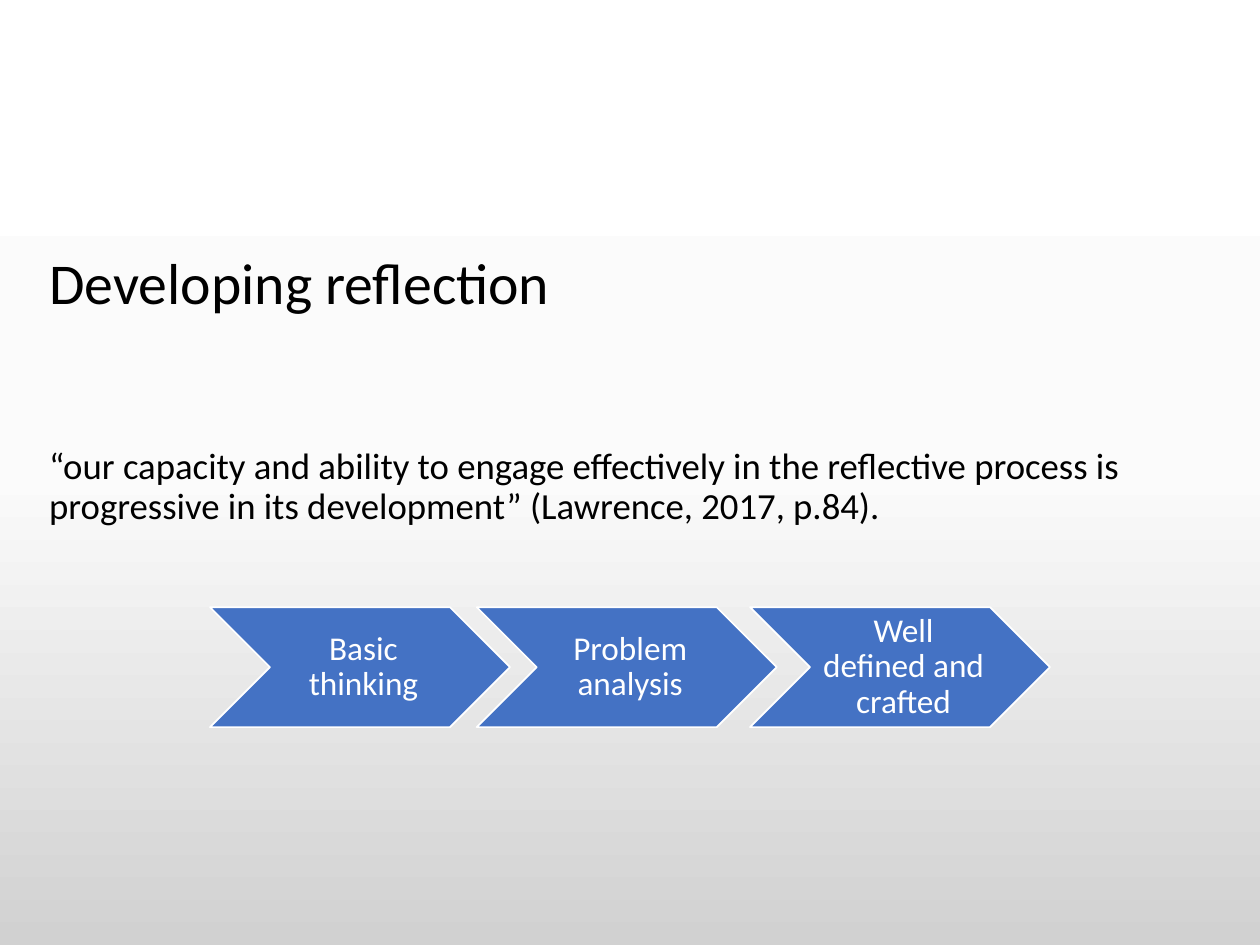
from copy import deepcopy
from dataclasses import dataclass

from pptx import Presentation
from pptx.dml.color import RGBColor as RGB
from pptx.enum.shapes import MSO_SHAPE as Shape
from pptx.enum.text import MSO_ANCHOR as Anchor, MSO_AUTO_SIZE as AutoSize, PP_ALIGN as Align
from pptx.oxml.ns import qn
from pptx.util import Pt


@dataclass(frozen=True)
class Theme:
    font: str = "Calibri"
    ink: str = "000000"
    light: str = "FFFFFF"
    accent: str = "4472C4"
    backdrop: tuple = ((0, "FFFFFF"), (0.5, "FBFBFB"), (1, "D1D1D1"))
    title_size: float = 33
    body_size: float = 21
    step_size: float = 19
    line_spacing: float = 0.9


class SlideBuilder:
    def __init__(self, slide, theme):
        self.slide = slide
        self.theme = theme

    def set_text(self, shape, text, size, color, align, anchor):
        frame = shape.text_frame
        frame.text = text
        frame.word_wrap = True
        frame.auto_size = AutoSize.NONE
        frame.vertical_anchor = anchor
        para = frame.paragraphs[0]
        para.alignment = align
        para.line_spacing = self.theme.line_spacing
        para.space_before = Pt(0)
        for span in para.runs:
            span.font.name = self.theme.font
            span.font.size = Pt(size)
            span.font.color.rgb = RGB.from_string(color)

    def background(self):
        """Fill the page with the three-stop gradient, running downwards."""
        fill = self.slide.background.fill
        fill.gradient()
        fill.gradient_angle = 270
        stop_list = self.slide.element.find(".//" + qn("a:gsLst"))
        stop_list.insert(1, deepcopy(stop_list[0]))
        for stop, (position, color) in zip(fill.gradient_stops, self.theme.backdrop):
            stop.position = position
            stop.color.rgb = RGB.from_string(color)

    def title(self, text, left, top, width, height):
        title = self.slide.shapes.title
        title.left, title.top = Pt(left), Pt(top)
        title.width, title.height = Pt(width), Pt(height)
        self.set_text(title, text, self.theme.title_size, self.theme.ink,
                      Align.LEFT, Anchor.MIDDLE)

    def body(self, text, left, top, width, height):
        box = self.slide.shapes.add_textbox(Pt(left), Pt(top), Pt(width), Pt(height))
        self.set_text(box, text, self.theme.body_size, self.theme.ink,
                      Align.LEFT, Anchor.TOP)

    def chevron(self, text, left, top, width, height):
        step = self.slide.shapes.add_shape(
            Shape.CHEVRON, Pt(left), Pt(top), Pt(width), Pt(height))
        step.shadow.inherit = False
        step.fill.solid()
        step.fill.fore_color.rgb = RGB.from_string(self.theme.accent)
        step.line.color.rgb = RGB.from_string(self.theme.light)
        step.line.width = Pt(1)
        frame = step.text_frame
        frame.margin_left = Pt(6)
        frame.margin_top = frame.margin_right = frame.margin_bottom = Pt(2)
        self.set_text(step, text, self.theme.step_size, self.theme.light,
                      Align.CENTER, Anchor.MIDDLE)


def main():
    deck = Presentation()
    deck.slide_width, deck.slide_height = Pt(720), Pt(540)
    title_only = deck.slide_layouts[5]
    page = SlideBuilder(deck.slides.add_slide(title_only), Theme())

    page.background()
    page.title("Developing reflection", 21, 111, 674, 104.5)
    page.body("“our capacity and ability to engage effectively in the reflective process is "
              "progressive in its development” (Lawrence, 2017, p.84).", 21, 252.5, 674, 256.5)
    steps = (("Basic thinking", 120), ("Problem analysis", 272.4),
             ("Well defined and crafted", 428.6))
    for text, left in steps:
        page.chevron(text, left, 347, 171.4, 68.5)

    deck.save("out.pptx")


if __name__ == "__main__":
    main()
